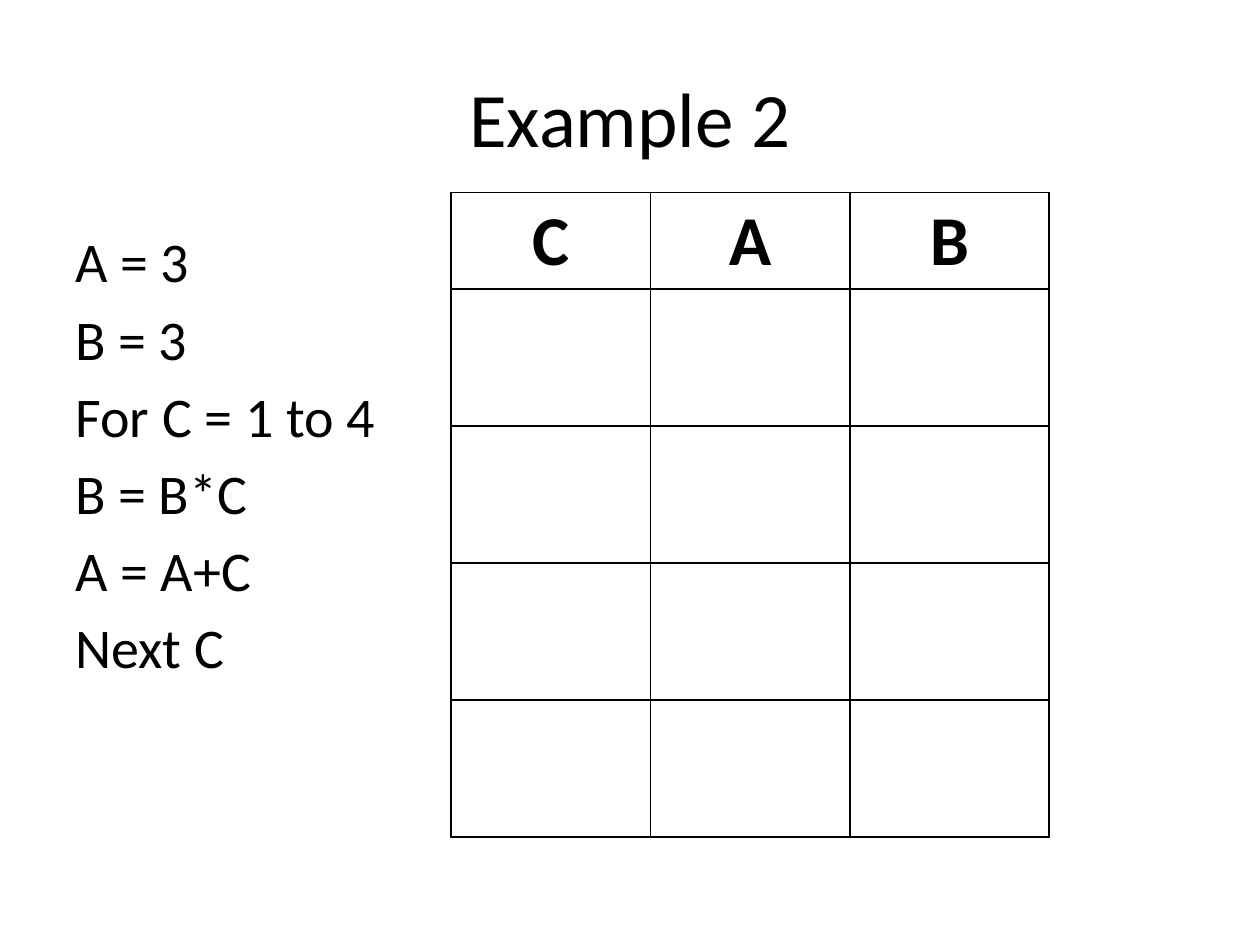
import dataclasses

import pptx
import pptx.dml.color
import pptx.enum.text
import pptx.oxml
import pptx.oxml.ns
import pptx.util
from pptx.util import Cm


@dataclasses.dataclass(frozen=True)
class Theme:
    font: str = "Calibri"
    ink: str = "000000"
    paper: str = "FFFFFF"
    title: int = 44
    code: int = 32
    header: int = 40
    code_gap: float = 5.7
    border: int = 1


THEME = Theme()
CODE = ["A = 3", "B = 3", "For C = 1 to 4", "B = B*C", "A = A+C", "Next C"]
HEADERS = ["C", "A", "B"]
BLANK_ROWS = 4


def add_run(p, text, size, bold=False):
    r = p.add_run()
    r.text = text
    r.font.name = THEME.font
    r.font.size = pptx.util.Pt(size)
    r.font.bold = bold
    r.font.color.rgb = pptx.dml.color.RGBColor.from_string(THEME.ink)


def add_text_frame(s, box):
    tf = s.shapes.add_textbox(*box).text_frame
    tf.word_wrap = True
    return tf


def add_title(s, box, text):
    tf = add_text_frame(s, box)
    tf.vertical_anchor = pptx.enum.text.MSO_ANCHOR.MIDDLE
    p = tf.paragraphs[0]
    p.alignment = pptx.enum.text.PP_ALIGN.CENTER
    add_run(p, text, THEME.title)


def add_code(s, box, lines):
    tf = add_text_frame(s, box)
    for i, line in enumerate(lines):
        p = tf.add_paragraph() if i else tf.paragraphs[0]
        p.space_before = pptx.util.Pt(THEME.code_gap)
        # Hanging indent for wrapped lines
        pPr = p._p.get_or_add_pPr()
        pPr.set("marL", str(Cm(0.95)))
        pPr.set("indent", str(-Cm(0.95)))
        add_run(p, line, THEME.code)


def style_cell(cell):
    # Borders come before the fill in the cell properties
    tcPr = cell._tc.get_or_add_tcPr()
    for side in ("lnL", "lnR", "lnT", "lnB"):
        tcPr.append(pptx.oxml.parse_xml(
            f'<a:{side} {pptx.oxml.ns.nsdecls("a")} w="{pptx.util.Pt(THEME.border)}">'
            f'<a:solidFill><a:srgbClr val="{THEME.ink}"/></a:solidFill></a:{side}>'))
    cell.fill.solid()
    cell.fill.fore_color.rgb = pptx.dml.color.RGBColor.from_string(THEME.paper)


def add_trace_table(s, box, headers, blank_rows):
    left, top, width, height = box
    header_height = Cm(1.65)
    table = s.shapes.add_table(blank_rows + 1, len(headers), *box).table
    for col in table.columns:
        col.width = width // len(headers)
    for i, row in enumerate(table.rows):
        row.height = (height - header_height) // blank_rows if i else header_height
    for cell in table.iter_cells():
        style_cell(cell)
    # Variable names
    for i, name in enumerate(headers):
        p = table.cell(0, i).text_frame.paragraphs[0]
        p.alignment = pptx.enum.text.PP_ALIGN.CENTER
        add_run(p, name, THEME.header, bold=True)


def main():
    prs = pptx.Presentation()
    prs.slide_width, prs.slide_height = Cm(25.4), Cm(19.05)
    s = prs.slides.add_slide(prs.slide_layouts[6])
    add_title(s, (Cm(1.27), Cm(0.76), Cm(22.86), Cm(3.18)), "Example 2")
    add_code(s, (Cm(1.27), Cm(4.45), Cm(22.86), Cm(12.57)), CODE)
    add_trace_table(s, (Cm(9.09), Cm(3.88), Cm(12.06), Cm(12.7)), HEADERS, BLANK_ROWS)
    prs.save("out.pptx")


if __name__ == "__main__":
    main()
